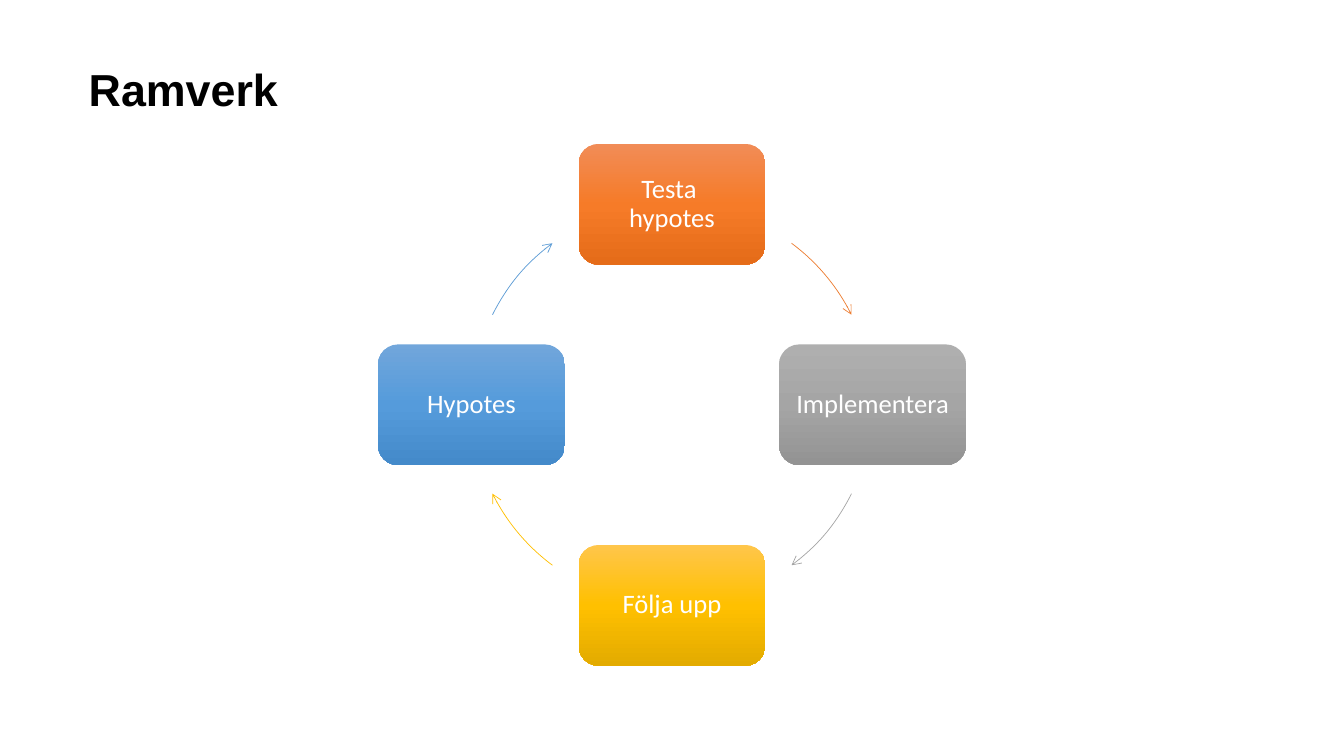
"""Build the Ramverk slide: a cycle of four steps joined by curved arrows."""
from copy import deepcopy

from lxml.etree import SubElement
from pptx import Presentation
from pptx.dml.color import RGBColor
from pptx.enum.shapes import MSO_SHAPE
from pptx.enum.text import MSO_ANCHOR, PP_ALIGN
from pptx.oxml.ns import qn
from pptx.util import Pt

PX = 9525
BLACK = RGBColor(0x00, 0x00, 0x00)
WHITE = RGBColor(0xFF, 0xFF, 0xFF)
ORANGE = RGBColor(0xED, 0x7D, 0x31)
GRAY = RGBColor(0xA5, 0xA5, 0xA5)
GOLD = RGBColor(0xFF, 0xC0, 0x00)
BLUE = RGBColor(0x5B, 0x9B, 0xD5)
ORANGES = RGBColor(0xF1, 0x8C, 0x57), RGBColor(0xF6, 0x7B, 0x28), RGBColor(0xE5, 0x6C, 0x19)
GRAYS = RGBColor(0xAF, 0xAF, 0xAF), GRAY, RGBColor(0x93, 0x93, 0x93)
GOLDS = RGBColor(0xFF, 0xC6, 0x4B), GOLD, RGBColor(0xE3, 0xAB, 0x00)
BLUES = RGBColor(0x71, 0xA6, 0xDB), RGBColor(0x55, 0x9B, 0xDB), RGBColor(0x44, 0x8A, 0xCA)

MID_X, MID_Y, RADIUS = 640, 385, 191
BOX_W, BOX_H, INSET = 178, 115, 7
STEPS = [
    ("Testa \vhypotes", 0, -1, ORANGES, ORANGE, 306.6, 333.5),
    ("Implementera", 1, 0, GRAYS, GRAY, 26.5, 53.4),
    ("Följa upp", 0, 1, GOLDS, GOLD, 126.6, 153.5),
    ("Hypotes", -1, 0, BLUES, BLUE, 206.5, 233.4),
]


def write(frame, text, font, size, color, bold=False):
    frame.word_wrap = True
    frame.text = text
    para = frame.paragraphs[0]
    para.line_spacing = 0.9
    for run in para.runs:
        run.font.name = font
        run.font.size = Pt(size)
        run.font.bold = bold
        run.font.color.rgb = color
    return para


def add(kind, left, top, width, height):
    shape = slide.shapes.add_shape(kind, left * PX, top * PX, width * PX, height * PX)
    shape.shadow.inherit = False
    return shape


deck = Presentation()
deck.slide_width, deck.slide_height = 1280 * PX, 720 * PX
slide = deck.slides.add_slide(deck.slide_layouts[6])

title = slide.shapes.add_textbox(75 * PX, 60 * PX, 1066 * PX, 77 * PX)
write(title.text_frame, "Ramverk", "Arial", 32, BLACK, True)

for label, col, row, shades, color, start, end in STEPS:
    left = MID_X + col * RADIUS - BOX_W // 2
    top = MID_Y + row * RADIUS - BOX_H // 2
    box = add(MSO_SHAPE.ROUNDED_RECTANGLE, left, top, BOX_W, BOX_H)
    box.line.fill.background()
    box.fill.gradient()
    box.fill.gradient_angle = 270
    stops = box.element.spPr.find(qn("a:gradFill")).find(qn("a:gsLst"))
    stops.insert(1, deepcopy(stops[0]))
    for stop, shade, place in zip(box.fill.gradient_stops, shades, (0, 0.5, 1)):
        stop.color.rgb = shade
        stop.position = place

    frame = box.text_frame
    para = write(frame, label, "Calibri", 19, WHITE)
    para.alignment = PP_ALIGN.CENTER
    frame.vertical_anchor = MSO_ANCHOR.MIDDLE
    frame.margin_left = frame.margin_right = INSET * PX
    frame.margin_top = frame.margin_bottom = INSET * PX

    arc = add(MSO_SHAPE.ARC, MID_X - RADIUS, MID_Y - RADIUS, 2 * RADIUS, 2 * RADIUS)
    arc.adjustments[0] = start * 0.6
    arc.adjustments[1] = end * 0.6
    arc.fill.background()
    arc.line.color.rgb = color
    arc.line.width = Pt(0.5)
    SubElement(arc.element.spPr.find(qn("a:ln")), qn("a:tailEnd"), type="arrow")

deck.save("out.pptx")
